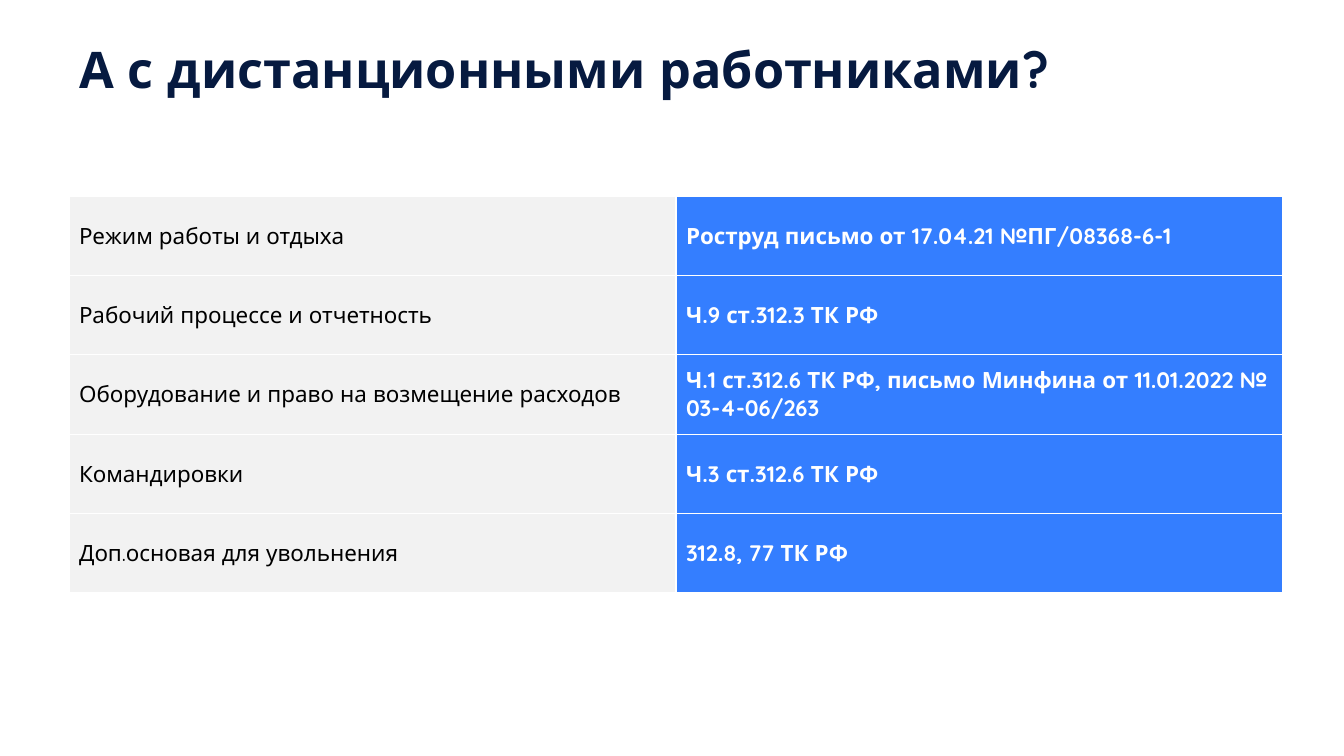
from lxml import etree
from pptx import Presentation
from pptx import util as u
from pptx.dml.color import RGBColor
from pptx.enum import text
from pptx.oxml import ns

TITLE = "А с дистанционными работниками?"
ROWS = [
    ("Режим работы и отдыха", "Роструд письмо от 17.04.21 №ПГ/08368-6-1"),
    ("Рабочий процессе и отчетность", "Ч.9 ст.312.3 ТК РФ"),
    ("Оборудование и право на возмещение расходов",
     "Ч.1 ст.312.6 ТК РФ, письмо Минфина от 11.01.2022 № 03-4-06/263"),
    ("Командировки", "Ч.3 ст.312.6 ТК РФ"),
    ("Доп.основая для увольнения", "312.8, 77 ТК РФ"),
]
COLUMN_STYLES = [("F2F2F2", "000000", False), ("347EFF", "FFFFFF", True)]
TITLE_BOX = (69, 40, 1092, 84)
TABLE_BOX = (69, 196, 1214, 397)
FONT = "Quicksand"
EMU_PER_PX = 914400 / 100.8


def px(length):
    return u.Emu(round(length * EMU_PER_PX))


def color(value):
    return RGBColor.from_string(value)


def add_run(paragraph, content, size, tint, bold):
    run = paragraph.add_run()
    run.text = content
    run.font.name = FONT
    run.font.size = u.Pt(size)
    run.font.bold = bold
    run.font.color.rgb = color(tint)


def add_borders(cell, tint, width):
    properties = cell._tc.get_or_add_tcPr()
    for position, side in enumerate(("lnL", "lnR", "lnT", "lnB")):
        line = etree.Element(ns.qn(f"a:{side}"), w=str(u.Pt(width)))
        fill = etree.SubElement(line, ns.qn("a:solidFill"))
        etree.SubElement(fill, ns.qn("a:srgbClr"), val=tint)
        properties.insert(position, line)


def add_title(slide):
    title = slide.shapes.title
    title.left, title.top, title.width, title.height = map(px, TITLE_BOX)
    frame = title.text_frame
    frame.word_wrap = True
    frame.auto_size = text.MSO_AUTO_SIZE.NONE
    frame.vertical_anchor = text.MSO_ANCHOR.TOP
    paragraph = frame.paragraphs[0]
    paragraph.alignment = text.PP_ALIGN.LEFT
    paragraph.line_spacing = 0.9
    add_run(paragraph, TITLE, 36, "061A40", True)


def add_rules_table(slide):
    left, top, width, height = TABLE_BOX
    columns = len(COLUMN_STYLES)
    table = slide.shapes.add_table(len(ROWS), columns, *map(px, TABLE_BOX)).table
    table.first_row = False
    table.horz_banding = False
    for column in table.columns:
        column.width = px(width / columns)
    for row, contents in zip(table.rows, ROWS):
        row.height = px(height / len(ROWS))
        for cell, content, (fill, tint, bold) in zip(row.cells, contents, COLUMN_STYLES):
            cell.fill.solid()
            cell.fill.fore_color.rgb = color(fill)
            cell.vertical_anchor = text.MSO_ANCHOR.MIDDLE
            add_borders(cell, "FFFFFF", 1)
            add_run(cell.text_frame.paragraphs[0], content, 16, tint, bold)


def main():
    presentation = Presentation()
    presentation.slide_width = px(1344)
    presentation.slide_height = px(756)
    slide = presentation.slides.add_slide(presentation.slide_layouts[5])
    add_title(slide)
    add_rules_table(slide)
    presentation.save("out.pptx")


if __name__ == "__main__":
    main()
